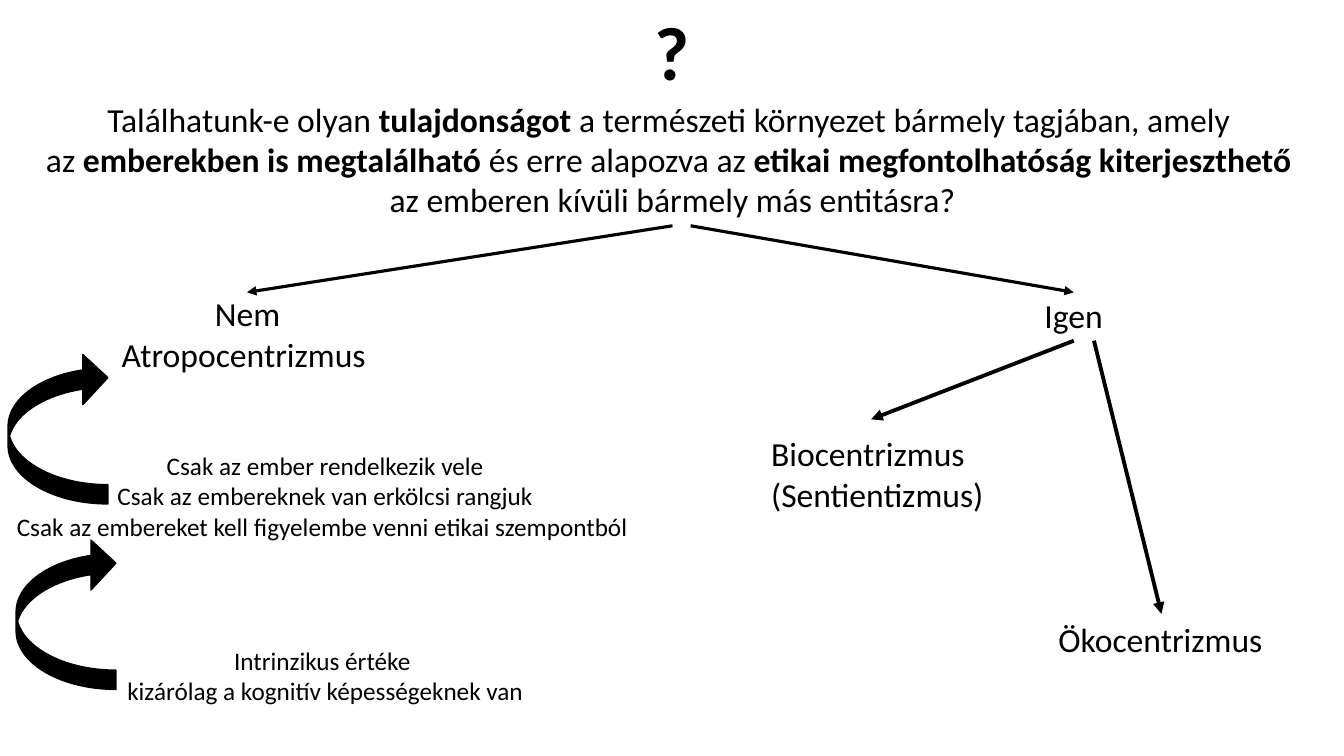
from pptx import Presentation
from pptx import util as u
from pptx.dml.color import RGBColor
from pptx.enum import shapes, text
from pptx.oxml.ns import qn
from lxml import etree

INK = "000000"
MID, LEFT = text.PP_ALIGN.CENTER, text.PP_ALIGN.LEFT

# Content: lines of text, with *bold* parts between stars
TITLE = ("*?*", (6.39, 0, 0.55, 1.01), 54, LEFT, False)
TEXTS = [
    # lines, place, size, alignment, wrap
    ("Találhatunk-e olyan *tulajdonságot* a természeti környezet bármely tagjában, amely \n"
     "az *emberekben is megtalálható *és erre alapozva az "
     "*etikai megfontolhatóság kiterjeszthető *\n"
     "az emberen kívüli bármely más entitásra?",
     (0.29, 0.93, 12.76, 1.31), 24, MID, False),
    ("Nem\nAtropocentrizmus ", (0.5, 2.86, 3.91, 0.91), 24, MID, True),
    ("Igen", (10.26, 2.88, 0.79, 0.5), 24, LEFT, False),
    ("Intrinzikus értéke \nkizárólag a kognitív képességeknek van",
     (1.07, 6.35, 4.31, 0.71), 18, MID, True),
    ("Csak az ember rendelkezik vele\nCsak az embereknek van erkölcsi rangjuk\n"
     "Csak az embereket kell figyelembe venni etikai szempontból ",
     (0.06, 4.42, 6.33, 1.01), 18, MID, False),
    ("Biocentrizmus\n(Sentientizmus)", (7.55, 4.25, 2.33, 0.91), 24, LEFT, False),
    ("Ökocentrizmus", (10.4, 6.09, 2.24, 0.5), 24, LEFT, False),
]
ARROWS = [
    # from, to, width
    ((6.67, 2.24), (2.45, 2.9), 2.25),
    ((6.85, 2.24), (10.65, 2.9), 2.25),
    ((10.65, 3.38), (8.64, 4.16), 2.75),
    ((10.85, 3.38), (11.52, 6.09), 2.75),
]
CURVES = [(0.16, 5.34), (0.08, 3.5)]
CURVE_SIZE = (0.99, 1.5)
CURVE_ADJ = (0.193, 0.5, 0.25)


def color(code):
    return RGBColor.from_string(code)


def inches(vals):
    return [u.Inches(v) for v in vals]


def write(box, lines, size, align, wrap):
    frame = box.text_frame
    form = {"word_wrap": wrap, "vertical_anchor": text.MSO_ANCHOR.TOP,
            "auto_size": text.MSO_AUTO_SIZE.SHAPE_TO_FIT_TEXT}
    for key, val in form.items():
        setattr(frame, key, val)
    for i, line in enumerate(lines.split("\n")):
        par = frame.add_paragraph() if i else frame.paragraphs[0]
        for key, val in {"alignment": align, "line_spacing": 1.0}.items():
            setattr(par, key, val)
        for j, part in enumerate(line.split("*")):
            if part:
                run = par.add_run()
                run.text = part
                font = {"name": "Calibri", "size": u.Pt(size), "bold": j % 2 == 1}
                for key, val in font.items():
                    setattr(run.font, key, val)
                run.font.color.rgb = color(INK)


def stroke(line, width):
    line.color.rgb = color(INK)
    line.width = u.Pt(width)


deck = Presentation()
deck.slide_width, deck.slide_height = inches((13.33, 7.5))
slide = deck.slides.add_slide(deck.slide_layouts[5])
parts = slide.shapes

# Title
lines, place, *form = TITLE
title = parts.title
title.left, title.top, title.width, title.height = inches(place)
write(title, lines, *form)

# Question, answers and reasons
for lines, place, *form in TEXTS:
    write(parts.add_textbox(*inches(place)), lines, *form)

# Curved arrows, pointing up
for spot in CURVES:
    curve = parts.add_shape(shapes.MSO_SHAPE.CURVED_RIGHT_ARROW, *inches(spot + CURVE_SIZE))
    for i, val in enumerate(CURVE_ADJ):
        curve.adjustments[i] = val
    curve.shadow.inherit = False
    curve.fill.solid()
    curve.fill.fore_color.rgb = color(INK)
    stroke(curve.line, 1)
    curve.element.spPr.find(qn("a:xfrm")).set("flipV", "1")

# Straight arrows
for start, end, width in ARROWS:
    arrow = parts.add_connector(shapes.MSO_CONNECTOR.STRAIGHT, *inches(start + end))
    stroke(arrow.line, width)
    props = arrow.element.spPr
    etree.SubElement(props.find(qn("a:ln")), qn("a:tailEnd"), type="triangle")
    etree.SubElement(props, qn("a:effectLst"))

deck.save("out.pptx")
